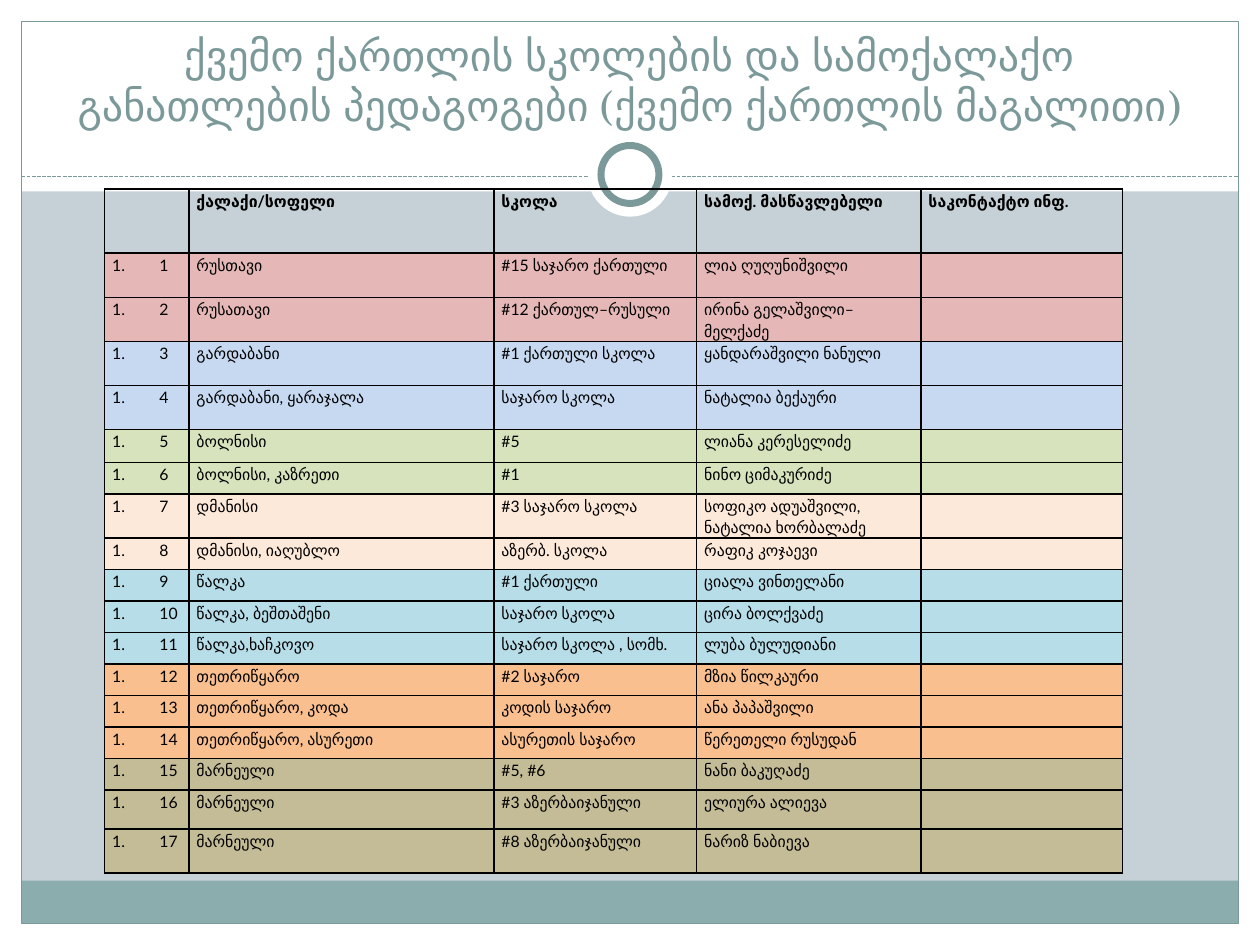
import dataclasses
import pptx
import pptx.dml.color
import pptx.enum.dml
import pptx.enum.shapes
import pptx.enum.text
import pptx.oxml
import pptx.oxml.ns
import pptx.util
from lxml import etree

COLUMNS, ROWS = 100, 75
CELL = pptx.util.Inches(0.1)
WHITE, TEAL, SAGE, SKY, BLACK = "FFFFFF", "7C999A", "8CADAE", "C5D1D7", "000000"
SHAPE = pptx.enum.shapes.MSO_SHAPE
qn = pptx.oxml.ns.qn

TITLE = "ქვემო ქართლის სკოლების და სამოქალაქო განათლების პედაგოგები (ქვემო ქართლის მაგალითი)"
HEADINGS = ["", "ქალაქი/სოფელი", "სკოლა", "სამოქ. მასწავლებელი", "საკონტაქტო ინფ."]
DISTRICTS = [
    ("E5B8B7", [
        (3.5, "რუსთავი", "#15 საჯარო ქართული", "ლია ღუღუნიშვილი"),
        (3.5, "რუსათავი", "#12 ქართულ–რუსული", "ირინა გელაშვილი–მელქაძე")]),
    ("C6D9F1", [
        (3.5, "გარდაბანი", "#1 ქართული სკოლა", "ყანდარაშვილი ნანული"),
        (3.5, "გარდაბანი, ყარაჯალა", "საჯარო სკოლა", "ნატალია ბექაური")]),
    ("D6E3BC", [
        (2.6, "ბოლნისი", "#5", "ლიანა კერესელიძე"),
        (2.5, "ბოლნისი, კაზრეთი", "#1", "ნინო ციმაკურიძე")]),
    ("FDE9D9", [
        (3.5, "დმანისი", "#3 საჯარო სკოლა", "სოფიკო ადუაშვილი, ნატალია ხორბალაძე"),
        (2.5, "დმანისი, იაღუბლო", "აზერბ. სკოლა", "რაფიკ კოჯაევი")]),
    ("B6DDE8", [
        (2.5, "წალკა", "#1 ქართული", "ციალა ვინთელანი"),
        (2.5, "წალკა, ბეშთაშენი", "საჯარო სკოლა", "ცირა ბოლქვაძე"),
        (2.5, "წალკა,ხაჩკოვო", "საჯარო სკოლა , სომხ.", "ლუბა ბულუდიანი")]),
    ("FABF8F", [
        (2.5, "თეთრიწყარო", "#2 საჯარო", "მზია წილკაური"),
        (2.5, "თეთრიწყარო, კოდა", "კოდის საჯარო", "ანა პაპაშვილი"),
        (2.5, "თეთრიწყარო, ასურეთი", "ასურეთის საჯარო", "წერეთელი რუსუდან")]),
    ("C4BC96", [
        (2.5, "მარნეული", "#5, #6", "ნანი ბაკუღაძე"),
        (3.1, "მარნეული", "#3 აზერბაიჯანული", "ელიურა ალიევა"),
        (3.5, "მარნეული", "#8 აზერბაიჯანული", "ნარიზ ნაბიევა")]),
]


@dataclasses.dataclass
class Box:
    left: float
    top: float
    width: float
    height: float

    def area(self, left, top, width, height):
        return Box(self.left + left, self.top + top, width, height)

    def centred(self, size, middle):
        return self.area((self.width - size) / 2, middle - size / 2, size, size)

    def emu(self):
        return [grid(n) for n in (self.left, self.top, self.width, self.height)]


def grid(count):
    return int(count * CELL)


def colour(value):
    return pptx.dml.color.RGBColor.from_string(value)


def add_panel(slide, box, fill=None, line=None, weight=0.75, kind=SHAPE.RECTANGLE):
    panel = slide.shapes.add_shape(kind, *box.emu())
    panel.shadow.inherit = False
    if fill:
        panel.fill.solid()
        panel.fill.fore_color.rgb = colour(fill)
    else:
        panel.fill.background()
    if line:
        panel.line.color.rgb = colour(line)
        panel.line.width = pptx.util.Pt(weight)
    else:
        panel.line.fill.background()


def add_run(paragraph, text, size, font, ink, bold=False):
    run = paragraph.add_run()
    run.text = text
    run.font.size = pptx.util.Pt(size)
    run.font.name = font
    run.font.bold = bold
    run.font.color.rgb = colour(ink)


def draw_frame(slide, page):
    edge, header = 1.7, 15.2
    add_panel(slide, page.area(0, page.height - edge, page.width, edge), WHITE)
    add_panel(slide, page.area(0, 0, page.width, header), WHITE)
    for left in (0, page.width - edge):
        add_panel(slide, page.area(left, 0, edge, page.height), WHITE)
    inner = page.area(edge, edge, page.width - 2 * edge, page.height - 2 * edge)
    add_panel(slide, inner.area(0, inner.height - 3.4, inner.width, 3.4), SAGE)
    add_panel(slide, inner, line=TEAL)


def draw_divider(slide, box):
    middle = box.height / 2
    y = grid(box.top + middle)
    divider = slide.shapes.add_connector(
        pptx.enum.shapes.MSO_CONNECTOR.STRAIGHT,
        grid(box.left), y, grid(box.left + box.width), y)
    divider.line.color.rgb = colour(TEAL)
    divider.line.width = pptx.util.Pt(0.75)
    divider.line.dash_style = pptx.enum.dml.MSO_LINE.SQUARE_DOT
    etree.SubElement(divider._element.spPr, qn("a:effectLst"))
    add_panel(slide, box.centred(6.7, middle - 0.15), WHITE, kind=SHAPE.OVAL)
    add_panel(slide, box.centred(4.6, middle - 0.15), WHITE, TEAL, 4, SHAPE.OVAL)


def draw_title(slide, box):
    frame = slide.shapes.add_textbox(*box.emu()).text_frame
    frame.word_wrap = True
    frame.vertical_anchor = pptx.enum.text.MSO_ANCHOR.BOTTOM
    heading = frame.paragraphs[0]
    heading.alignment = pptx.enum.text.PP_ALIGN.CENTER
    add_run(heading, TITLE, 24, "TeX Gyre Schola", TEAL)


def add_borders(cell):
    properties = cell._tc.get_or_add_tcPr()
    for position, side in enumerate(("lnL", "lnR", "lnT", "lnB")):
        border = etree.Element(qn(f"a:{side}"), w=str(pptx.util.Pt(1)))
        solid = etree.SubElement(border, qn("a:solidFill"))
        etree.SubElement(solid, qn("a:srgbClr"), val=BLACK)
        properties.insert(position, border)


def add_numbering(paragraph):
    properties = paragraph._p.get_or_add_pPr()
    indent = grid(3.75)
    properties.set("marL", str(indent))
    properties.set("indent", str(-indent))
    etree.SubElement(properties, qn("a:buFont"), typeface="+mj-lt")
    etree.SubElement(properties, qn("a:buAutoNum"), type="arabicPeriod")


def fill_cell(cell, text, fill=None, bold=False, numbered=False):
    cell.margin_left = cell.margin_right = grid(0.6)
    cell.margin_top = cell.margin_bottom = 0
    if fill:
        cell.fill.solid()
        cell.fill.fore_color.rgb = colour(fill)
    else:
        cell.fill.background()
    add_borders(cell)
    paragraph = cell.text_frame.paragraphs[0]
    paragraph.line_spacing = 1.15
    if numbered:
        add_numbering(paragraph)
    if text:
        add_run(paragraph, text, 9, "Lato", BLACK, bold)
    else:
        etree.SubElement(paragraph._p, qn("a:endParaRPr"), sz="900")


def draw_register(slide, box):
    teachers = [(fill, *entry) for fill, entries in DISTRICTS for entry in entries]
    heights = [5.1] + [height for _, height, *_ in teachers]
    widths = [6.7, 24.2, 16.1, 17.8, 16]
    register = slide.shapes.add_table(len(heights), len(widths), *box.emu()).table
    register.first_row = register.horz_banding = False
    for column, width in zip(register.columns, widths):
        column.width = grid(width)
    for row, height in zip(register.rows, heights):
        row.height = grid(height)
    for cell, heading in zip(register.rows[0].cells, HEADINGS):
        fill_cell(cell, heading, bold=True)
    for number, (fill, _, *details) in enumerate(teachers, 1):
        texts = [str(number), *details, ""]
        for index, (cell, text) in enumerate(zip(register.rows[number].cells, texts)):
            fill_cell(cell, text, fill, numbered=index == 0)


def main():
    deck = pptx.Presentation()
    deck.slide_width, deck.slide_height = grid(COLUMNS), grid(ROWS)
    slide = deck.slides.add_slide(deck.slide_layouts[6])
    slide.background.fill.solid()
    slide.background.fill.fore_color.rgb = colour(SKY)
    page = Box(0, 0, COLUMNS, ROWS)
    draw_frame(slide, page)
    draw_divider(slide, page.area(1.7, 10, 96.6, 8))
    draw_title(slide, page.area(3.3, 2.5, 93.3, 8.3))
    draw_register(slide, page.area(8.3, 15, 80.8, 54.2))
    deck.save("out.pptx")


if __name__ == "__main__":
    main()
